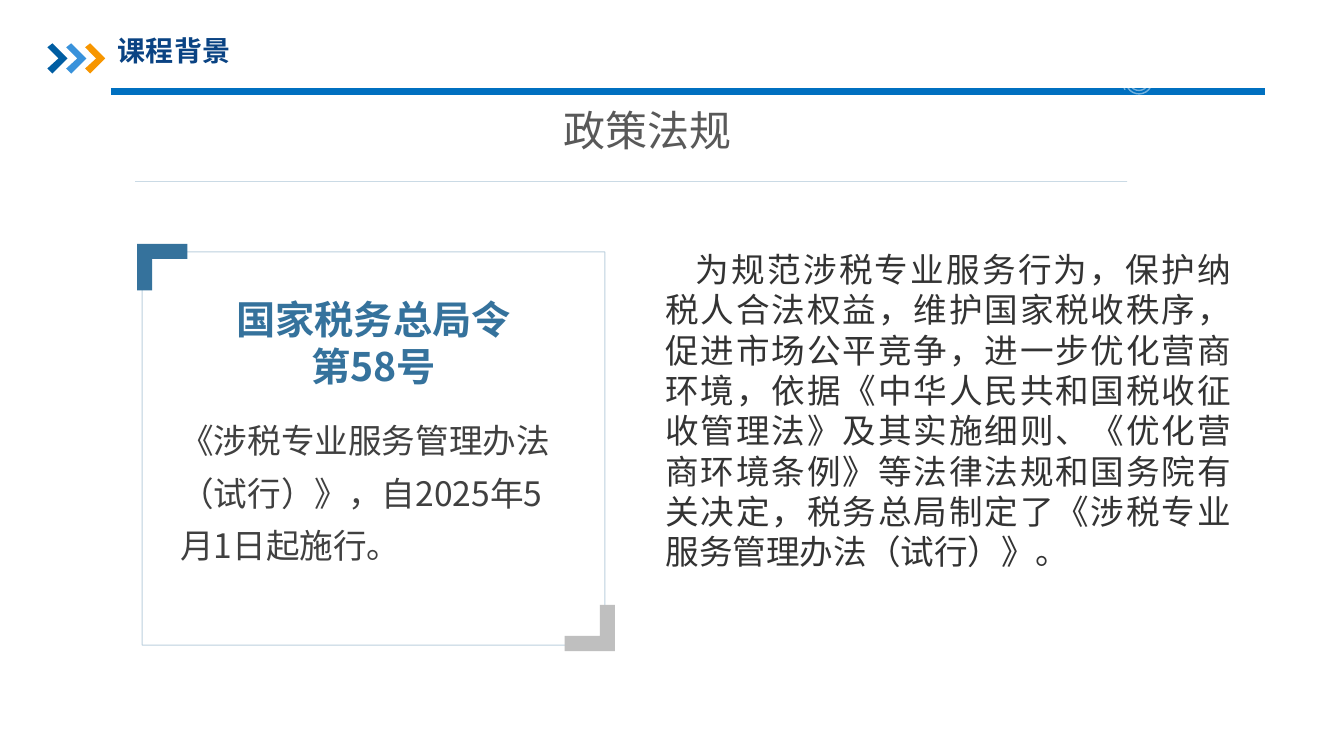
from dataclasses import dataclass
from math import cos, pi, sin

from pptx import Presentation
from pptx.dml.color import RGBColor
from pptx.enum.shapes import MSO_CONNECTOR, MSO_SHAPE
from pptx.enum.text import MSO_ANCHOR, MSO_AUTO_SIZE, PP_ALIGN
from pptx.oxml.ns import qn
from pptx.oxml.xmlchemy import OxmlElement
from pptx.util import Inches, Pt

STRAIGHT = MSO_CONNECTOR.STRAIGHT
RECTANGLE = MSO_SHAPE.RECTANGLE
TOP = MSO_ANCHOR.TOP
GROW, FIXED = MSO_AUTO_SIZE.SHAPE_TO_FIT_TEXT, MSO_AUTO_SIZE.NONE
LEFT, CENTER, JUSTIFY = PP_ALIGN.LEFT, PP_ALIGN.CENTER, PP_ALIGN.JUSTIFY

FONT = "Noto Sans CJK SC"
NAVY = RGBColor(0x0A, 0x43, 0x83)
DEEP_BLUE = RGBColor(0x00, 0x5D, 0xA2)
SKY_BLUE = RGBColor(0x39, 0x92, 0xDB)
ORANGE = RGBColor(0xF7, 0x96, 0x00)
BAR_BLUE = RGBColor(0x00, 0x70, 0xC0)
STEEL = RGBColor(0x35, 0x72, 0x9C)
SILVER = RGBColor(0xBF, 0xBF, 0xBF)
WHITE = RGBColor(0xFF, 0xFF, 0xFF)
GRAY = RGBColor(0x59, 0x59, 0x59)
DARK_GRAY = RGBColor(0x40, 0x40, 0x40)
INK = RGBColor(0x33, 0x33, 0x33)

# Grid cells are a tenth of an inch: columns run across, rows run down.
CELL = Inches(0.1)
SLIDE_COLUMNS, SLIDE_ROWS = 133.3, 75

Points = list[tuple[float, float]]


@dataclass
class TextBlock:
    text: str
    column: float
    row: float
    columns: float
    rows: float
    size: int
    color: RGBColor
    align: PP_ALIGN = LEFT
    bold: bool = False
    line_spacing: float = 1.0


@dataclass
class Rule:
    start: float
    end: float
    row: float
    color: RGBColor
    width: float
    opacity: int = 100


@dataclass
class Bracket:
    column: float
    row: float
    direction: int
    color: RGBColor


TITLE = TextBlock("课程背景", 11.7, 3.3, 54.2, 3.4, 20, NAVY, bold=True)
BODY = TextBlock(
    "为规范涉税专业服务行为，保护纳税人合法权益，维护国家税收秩序，促进市场公平竞争，"
    "进一步优化营商环境，依据《中华人民共和国税收征收管理法》及其实施细则、"
    "《优化营商环境条例》等法律法规和国务院有关决定，"
    "税务总局制定了《涉税专业服务管理办法（试行）》。",
    60, 24.2, 63.1, 41.2, 24, INK, JUSTIFY)
TEXT_BOXES = [
    TextBlock("国家税务总局令第58号", 22.2, 28.8, 29.7, 10.4, 28, STEEL, CENTER, bold=True),
    TextBlock("《涉税专业服务管理办法（试行）》，自2025年5月1日起施行。",
              16.9, 40, 40.3, 16.7, 24, DARK_GRAY, line_spacing=1.3),
    TextBlock("政策法规", 47.9, 9.9, 32.6, 6, 30, GRAY, CENTER),
]
HEADER_RULE = Rule(11, 125.5, 9.1, BAR_BLUE, 5)
SUBTITLE_RULE = Rule(13.4, 111.8, 18, STEEL, 0.5, 25)
BRACKETS = [Bracket(13.6, 24.2, 1, STEEL), Bracket(61, 64.6, -1, SILVER)]
BRACKET_OUTLINE = [(0, 0), (5, 0), (5, 1.5), (1.5, 1.5), (1.5, 4.6), (0, 4.6)]
CHEVRON_OUTLINE = [(0, 0.4), (0.5, 0), (2, 1.5), (0.5, 3), (0, 2.5), (1.1, 1.5)]
CHEVRON_COLORS = [DEEP_BLUE, SKY_BLUE, ORANGE]
CHEVRON_COLUMN, CHEVRON_ROW, CHEVRON_STEP = 4.7, 4.3, 1.87


def grid(cells: float) -> int:
    return round(cells * CELL)


def set_opacity(shape, percent: int) -> None:
    """Make the shape's line partly transparent."""
    color = shape._element.xpath("./p:spPr/a:ln//a:srgbClr")[0]
    alpha = OxmlElement("a:alpha")
    alpha.set("val", str(percent * 1000))
    color.append(alpha)


def draw_rule(slide, rule: Rule) -> None:
    row = grid(rule.row)
    connector = slide.shapes.add_connector(STRAIGHT, grid(rule.start), row, grid(rule.end), row)
    connector.line.color.rgb = rule.color
    connector.line.width = Pt(rule.width)
    connector._element.spPr.append(OxmlElement("a:effectLst"))
    if rule.opacity < 100:
        set_opacity(connector, rule.opacity)


def draw_outline(slide, points: Points, close: bool = True):
    corners = [(grid(column), grid(row)) for column, row in points]
    builder = slide.shapes.build_freeform(*corners[0])
    builder.add_line_segments(corners[1:], close=close)
    shape = builder.convert_to_shape()
    shape.shadow.inherit = False
    return shape


def draw_polygon(slide, points: Points, color: RGBColor) -> None:
    shape = draw_outline(slide, points)
    shape.fill.solid()
    shape.fill.fore_color.rgb = color
    shape.line.fill.background()


def draw_spiral(slide) -> None:
    """Draw the faint white scroll that shows over the header rule."""
    turns, steps = 3.75, 90
    points = []
    for step in range(steps + 1):
        share = step / steps
        angle = -pi / 2 - 2 * pi * turns * share
        radius = 0.3 + 1.3 * share
        points.append((112.7 + radius * cos(angle), 7.9 + radius * sin(angle)))
    spiral = draw_outline(slide, points, close=False)
    spiral.fill.background()
    spiral.line.color.rgb = WHITE
    spiral.line.width = Pt(1)
    spiral.rotation = 146
    set_opacity(spiral, 45)


def draw_card(slide) -> None:
    card = slide.shapes.add_shape(RECTANGLE, grid(14.1), grid(25), grid(45.9), grid(39))
    card.shadow.inherit = False
    card.fill.background()
    card.line.color.rgb = STEEL
    card.line.width = Pt(0.75)
    set_opacity(card, 32)


def write_text(shape, block: TextBlock, auto_size: MSO_AUTO_SIZE = GROW) -> None:
    shape.left, shape.top = grid(block.column), grid(block.row)
    shape.width, shape.height = grid(block.columns), grid(block.rows)
    frame = shape.text_frame
    frame.text = block.text
    frame.word_wrap = True
    frame.auto_size = auto_size
    frame.vertical_anchor = TOP
    paragraph = frame.paragraphs[0]
    paragraph.alignment = block.align
    paragraph.line_spacing = block.line_spacing
    paragraph.space_before = Pt(0)
    font = paragraph.runs[0].font
    font.name, font.size, font.bold = FONT, Pt(block.size), block.bold
    font.color.rgb = block.color
    east_asian = OxmlElement("a:ea")
    east_asian.set("typeface", FONT)
    font._element.find(qn("a:latin")).addnext(east_asian)


def main() -> None:
    presentation = Presentation()
    presentation.slide_width, presentation.slide_height = grid(SLIDE_COLUMNS), grid(SLIDE_ROWS)
    slide = presentation.slides.add_slide(presentation.slide_layouts[1])

    for index, color in enumerate(CHEVRON_COLORS):
        left = CHEVRON_COLUMN + index * CHEVRON_STEP
        draw_polygon(slide, [(left + x, CHEVRON_ROW + y) for x, y in CHEVRON_OUTLINE], color)
    draw_rule(slide, HEADER_RULE)
    draw_spiral(slide)
    draw_card(slide)
    for bracket in BRACKETS:
        draw_polygon(slide, [(bracket.column + bracket.direction * x,
                              bracket.row + bracket.direction * y)
                             for x, y in BRACKET_OUTLINE], bracket.color)
    draw_rule(slide, SUBTITLE_RULE)

    title, body = slide.shapes.title, slide.placeholders[1]
    write_text(title, TITLE)
    frame = title.text_frame
    frame.margin_left = frame.margin_top = frame.margin_right = frame.margin_bottom = 0
    write_text(body, BODY, FIXED)
    properties = body.text_frame.paragraphs[0]._p.get_or_add_pPr()
    properties.set("marL", str(grid(5)))
    properties.set("indent", str(grid(3)))
    properties.append(OxmlElement("a:buNone"))
    for block in TEXT_BOXES:
        write_text(slide.shapes.add_textbox(0, 0, CELL, CELL), block)

    presentation.save("out.pptx")


if __name__ == "__main__":
    main()
